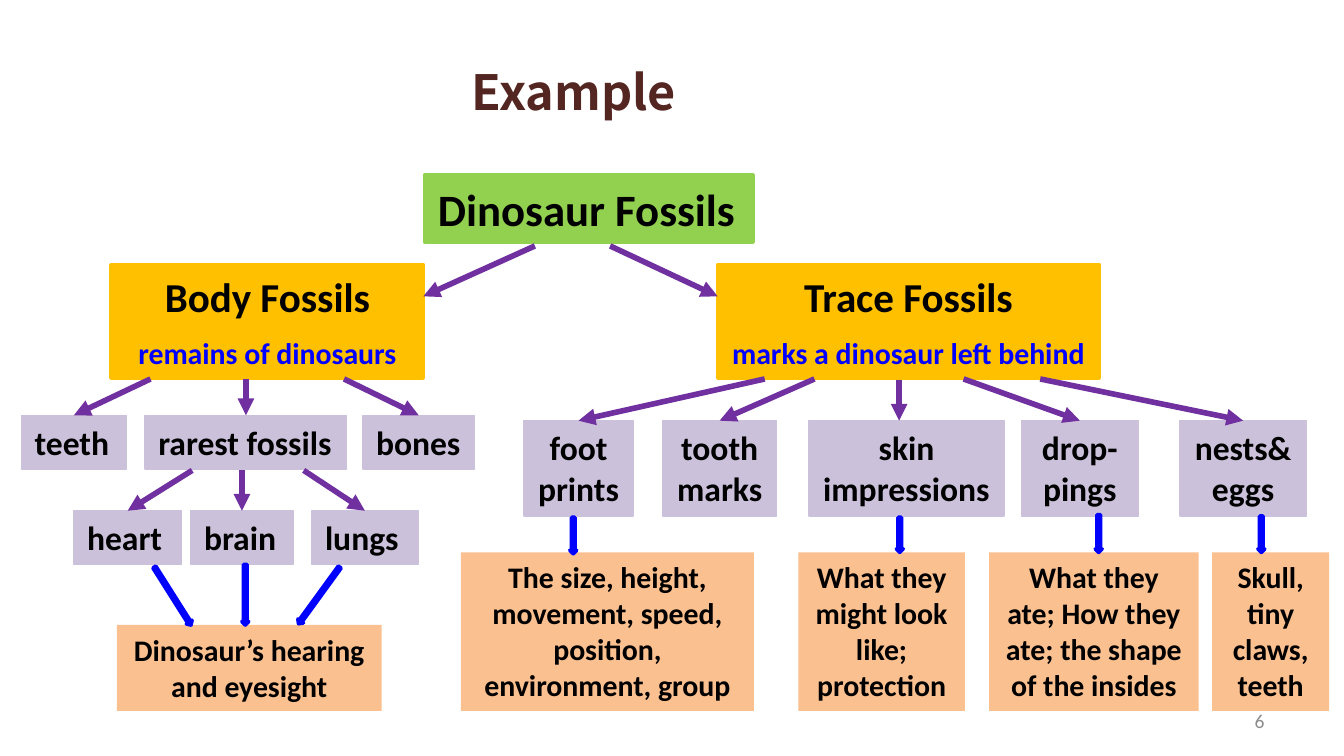
"""Build a slide with a tree diagram of dinosaur fossils."""
from dataclasses import dataclass

from lxml.etree import SubElement
from pptx import Presentation
from pptx.dml.color import RGBColor
from pptx.enum.shapes import MSO_CONNECTOR, MSO_SHAPE
from pptx.enum.text import MSO_ANCHOR, MSO_AUTO_SIZE, PP_ALIGN
from pptx.oxml.ns import qn
from pptx.util import Inches, Pt


@dataclass(frozen=True)
class TextStyle:
    """Font, size, colour, weight and alignment of a text."""
    size: float
    color: str = "000000"
    font: str = "Calibri"
    bold: bool = True
    align: PP_ALIGN = PP_ALIGN.CENTER


@dataclass(frozen=True)
class BoxStyle:
    """Fill, outline width and text style of a box."""
    fill: str
    outline: float
    text: TextStyle


@dataclass(frozen=True)
class Theme:
    """All colours and type sizes of the slide."""
    title = TextStyle(26, "542622", "Noto Sans CJK SC")
    number = TextStyle(10.5, "8C8C8C", bold=False, align=PP_ALIGN.RIGHT)
    root = BoxStyle("92D050", 2.25, TextStyle(24, align=PP_ALIGN.LEFT))
    branch = BoxStyle("FFC000", 2.25, TextStyle(22))
    meaning = BoxStyle("FFC000", 2.25, TextStyle(16, "0000FF"))
    body_part = BoxStyle("CCC1DA", 0.75, TextStyle(18, align=PP_ALIGN.LEFT))
    trace = BoxStyle("CCC1DA", 0.75, TextStyle(18))
    finding = BoxStyle("FAC090", 0, TextStyle(16))
    branch_arrow = "7030A0"
    finding_arrow = "0000FF"


THEME = Theme()

ROWS = [
    (THEME.root, 1.3, 0.5, [("Dinosaur Fossils", 3.16, 2.44)]),
    (THEME.branch, 1.97, 0.47, [("Body Fossils", 0.83, 2.32), ("Trace Fossils", 5.34, 2.84)]),
    (THEME.meaning, 2.44, 0.37, [("remains of dinosaurs", 0.83, 2.32),
                                 ("marks a dinosaur left behind", 5.34, 2.84)]),
    (THEME.body_part, 3.09, 0.4, [("teeth", 0.16, 0.78), ("rarest fossils", 1.08, 1.5),
                                  ("bones", 2.7, 0.83)]),
    (THEME.trace, 3.13, 0.71, [("foot\nprints", 3.9, 0.81), ("tooth\vmarks", 4.93, 0.85),
                               ("skin impressions", 6.02, 1.45), ("drop-pings", 7.6, 0.87),
                               ("nests&\neggs", 8.78, 0.94)]),
    (THEME.body_part, 3.8, 0.4, [("heart", 0.55, 0.8), ("brain", 1.42, 0.76),
                                 ("lungs", 2.32, 0.79)]),
    (THEME.finding, 4.65, 0.64, [("Dinosaur’s hearing and eyesight", 0.87, 1.97)]),
    (THEME.finding, 4.11, 1.18, [
        ("The size, height, movement, speed, position, environment, group", 3.43, 2.18),
        ("What they might look like; protection", 5.94, 1.24),
        ("What they ate; How they ate; the shape of the insides", 7.36, 1.56),
        ("Skull, tiny claws, teeth", 9.02, 0.87)]),
]

TOP, LEFT, RIGHT = 0, 1, 3

JOINED_ARROWS = [
    (1.83, LEFT, [(4.54, "Trace Fossils")]),
    (1.83, RIGHT, [(3.98, "Body Fossils")]),
    (2.82, TOP, [(1.12, "teeth"), (1.83, "rarest fossils"), (2.56, "bones"),
                 (5.69, "foot\nprints"), (6.06, "tooth\vmarks"),
                 (7.17, "drop-pings"), (7.74, "nests&\neggs")]),
    (3.5, TOP, [(1.43, "heart"), (1.8, "brain"), (2.26, "lungs")]),
]

FINDING_ARROWS = [
    (1.26, 4.18, 0.51, -32.3), (1.8, 4.2, 0.45, 0), (2.35, 4.17, 0.52, 36),
    (4.24, 3.85, 0.27, 0), (6.67, 3.85, 0.26, 0), (8.15, 3.83, 0.28, 0), (9.36, 3.84, 0.27, 0),
]


def color(code):
    """Turn a hex code into a colour."""
    return RGBColor.from_string(code)


def add_span(para, text, style):
    """Add one formatted run."""
    span = para.add_run()
    span.text = text
    span.font.name = style.font
    span.font.size = Pt(style.size)
    span.font.bold = style.bold
    span.font.color.rgb = color(style.color)


def write_text(frame, text, style, anchor, inset):
    """Write text with newlines as paragraphs and vertical tabs as line breaks."""
    frame.word_wrap = True
    frame.auto_size = MSO_AUTO_SIZE.NONE
    frame.vertical_anchor = anchor
    frame.margin_left = frame.margin_right = Inches(inset)
    frame.margin_top = frame.margin_bottom = Inches(inset / 2)
    for index, paragraph_text in enumerate(text.split("\n")):
        para = frame.add_paragraph() if index else frame.paragraphs[0]
        para.alignment = style.align
        for line_index, line in enumerate(paragraph_text.split("\v")):
            if line_index:
                para.add_line_break()
            add_span(para, line, style)


def add_title(page, text):
    """Place and format the title placeholder."""
    title = page.shapes.title
    title.left, title.top, title.width, title.height = map(Inches, (1.45, 0.21, 5.64, 0.94))
    write_text(title.text_frame, text, THEME.title, MSO_ANCHOR.MIDDLE, 0.18)


def add_page_number(page, text):
    """Add the page number at the lower right."""
    box = page.shapes.add_textbox(*map(Inches, (7.17, 5.21, 2.33, 0.3)))
    write_text(box.text_frame, text, THEME.number, MSO_ANCHOR.MIDDLE, 0.09)


def paint_shape(shape, fill, outline):
    """Fill and outline a shape in one colour, without shadow."""
    shape.shadow.inherit = False
    shape.fill.solid()
    shape.fill.fore_color.rgb = color(fill)
    if outline:
        shape.line.color.rgb = color(fill)
        shape.line.width = Pt(outline)
    else:
        shape.line.fill.background()


def add_box(page, text, bounds, style):
    """Add a labelled rectangle."""
    box = page.shapes.add_shape(MSO_SHAPE.RECTANGLE, *map(Inches, bounds))
    paint_shape(box, style.fill, style.outline)
    write_text(box.text_frame, text, style.text, MSO_ANCHOR.TOP, 0.1)
    return box


def add_branch_arrow(page, start, end):
    """Add a line with an arrowhead at its end."""
    arrow = page.shapes.add_connector(MSO_CONNECTOR.STRAIGHT, *map(Inches, start + end))
    arrow.line.color.rgb = color(THEME.branch_arrow)
    arrow.line.width = Pt(3)
    SubElement(arrow.line._get_or_add_ln(), qn("a:tailEnd"), type="triangle")
    SubElement(arrow._element.spPr, qn("a:effectLst"))
    return arrow


def add_finding_arrow(page, left, top, height, rotation):
    """Add a thin block arrow that points down to a finding."""
    arrow = page.shapes.add_shape(MSO_SHAPE.DOWN_ARROW, *map(Inches, (left, top, 0.05, height)))
    paint_shape(arrow, THEME.finding_arrow, 2)
    arrow.rotation = rotation


def main():
    """Build and save the deck."""
    deck = Presentation()
    deck.slide_width = Inches(10)
    deck.slide_height = deck.slide_width * 9 // 16
    page = deck.slides.add_slide(deck.slide_layouts[5])
    add_title(page, "Example")
    add_page_number(page, "6")
    boxes = {}
    for style, top, height, row in ROWS:
        for text, left, width in row:
            boxes[text] = add_box(page, text, (left, top, width, height), style)
    for top, side, row in JOINED_ARROWS:
        for left, target in row:
            arrow = add_branch_arrow(page, (left, top), (left, top))
            arrow.end_connect(boxes[target], side)
    add_branch_arrow(page, (6.69, 2.83), (6.69, 3.13))
    for placement in FINDING_ARROWS:
        add_finding_arrow(page, *placement)
    deck.save("out.pptx")


if __name__ == "__main__":
    main()
